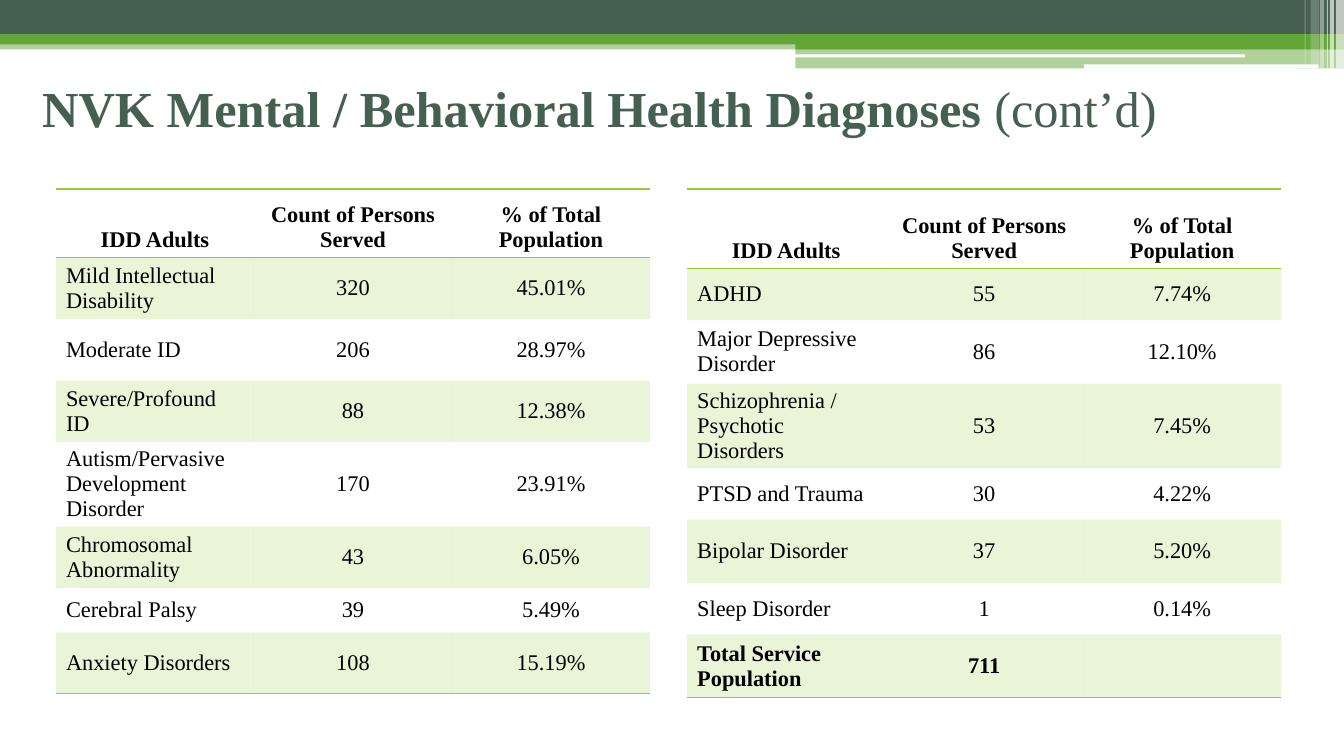
from dataclasses import dataclass

import lxml.etree
import pptx
import pptx.dml.color
import pptx.enum.shapes
import pptx.enum.text
import pptx.oxml
import pptx.oxml.ns
import pptx.util

COLORS = {
    "dark": "455F51",
    "green": "63A537",
    "lime": "99CB38",
    "white": "FFFFFF",
    "black": "000000",
}
FONT = "Times New Roman"
PLAIN_TABLE_STYLE = "{2D5ABB26-0587-4C30-8999-92F81FD0307C}"
GRID_COLUMNS, GRID_ROWS = 1333, 750
PAGE_WIDTH, PAGE_HEIGHT = pptx.util.Inches(13.33), pptx.util.Inches(7.5)
Align = pptx.enum.text.PP_ALIGN
Anchor = pptx.enum.text.MSO_ANCHOR
Preset = pptx.enum.shapes.MSO_SHAPE


@dataclass
class Band:
    column: int
    row: int
    columns: int
    rows: int
    color: str
    opacity: int = 100
    rounded: bool = False


@dataclass
class Diagnosis:
    name: str
    count: str
    share: str
    rows: int
    bold: bool = False


@dataclass
class DiagnosisTable:
    column: float
    header_rows: int
    diagnoses: list[Diagnosis]


BANDS = [
    Band(0, 40, 1333, 9, "green", 50),
    Band(0, 0, 1333, 34, "dark"),
    Band(0, 34, 1333, 10, "green"),
    Band(789, 39, 544, 10, "green"),
    Band(789, 48, 544, 20, "green", 50),
    Band(788, 54, 447, 3, "white", rounded=True),
    Band(1075, 64, 233, 4, "white", rounded=True),
    Band(1325, 0, 8, 68, "white", 65),
    Band(1319, 0, 4, 68, "white", 65),
    Band(1316, 0, 1, 68, "white", 60),
    Band(1309, 0, 4, 68, "white", 40),
    Band(1300, 0, 8, 64, "white", 20),
    Band(1294, 0, 1, 64, "white", 30),
]
HEADERS = ["IDD Adults", "Count of Persons Served", "% of Total Population"]
TABLE_ROW, TABLE_CELL_COLUMNS, DIAGNOSIS_MARGIN_ROWS = 187.5, 196.4, 2
TABLES = [
    DiagnosisTable(55.5, 68, [
        Diagnosis("Mild Intellectual Disability", "320", "45.01%", 61),
        Diagnosis("Moderate ID", "206", "28.97%", 61),
        Diagnosis("Severe/Profound ID", "88", "12.38%", 61),
        Diagnosis("Autism/Pervasive Development Disorder", "170", "23.91%", 44),
        Diagnosis("Chromosomal Abnormality", "43", "6.05%", 61),
        Diagnosis("Cerebral Palsy", "39", "5.49%", 44),
        Diagnosis("Anxiety Disorders", "108", "15.19%", 61),
    ]),
    DiagnosisTable(681.5, 79, [
        Diagnosis("ADHD", "55", "7.74%", 51),
        Diagnosis("Major Depressive Disorder", "86", "12.10%", 63),
        Diagnosis("Schizophrenia / Psychotic Disorders", "53", "7.45%", 51),
        Diagnosis("PTSD and Trauma", "30", "4.22%", 51),
        Diagnosis("Bipolar Disorder", "37", "5.20%", 63),
        Diagnosis("Sleep Disorder", "1", "0.14%", 51),
        Diagnosis("Total Service Population", "711", "", 63, bold=True),
    ]),
]


def across(columns: float) -> int:
    return round(PAGE_WIDTH * columns / GRID_COLUMNS)


def down(rows: float) -> int:
    return round(PAGE_HEIGHT * rows / GRID_ROWS)


def paint(fill, color: str, opacity: int = 100) -> None:
    fill.solid()
    fill.fore_color.rgb = pptx.dml.color.RGBColor.from_string(COLORS[color])
    if opacity < 100:
        tint = fill._xPr.find(".//" + pptx.oxml.ns.qn("a:srgbClr"))
        lxml.etree.SubElement(tint, pptx.oxml.ns.qn("a:alpha"), val=str(opacity * 1000))


def add_span(para, text: str, size: int, color: str, bold: bool) -> None:
    span = para.add_run()
    span.text = text
    span.font.name = FONT
    span.font.size = pptx.util.Pt(size)
    span.font.bold = bold
    span.font.color.rgb = pptx.dml.color.RGBColor.from_string(COLORS[color])


def add_band(page, band: Band) -> None:
    preset = Preset.ROUNDED_RECTANGLE if band.rounded else Preset.RECTANGLE
    shape = page.shapes.add_shape(preset, across(band.column), down(band.row),
                                  across(band.columns), down(band.rows))
    shape.shadow.inherit = False
    shape.line.fill.background()
    paint(shape.fill, band.color, band.opacity)


def add_title(page) -> None:
    box = page.shapes.add_textbox(across(32), down(48), across(1200), down(117))
    box.text_frame.word_wrap = True
    box.text_frame.vertical_anchor = Anchor.MIDDLE
    para = box.text_frame.paragraphs[0]
    add_span(para, "NVK Mental / Behavioral Health Diagnoses ", 36, "dark", True)
    add_span(para, "(cont’d)", 36, "dark", False)


def rule_cell(cell, sides: list[str]) -> None:
    properties = cell._tc.get_or_add_tcPr()
    for position, side in enumerate(sides):
        properties.insert(position, pptx.oxml.parse_xml(
            f'<a:ln{side} {pptx.oxml.ns.nsdecls("a")} w="12700"><a:solidFill>'
            f'<a:srgbClr val="{COLORS["lime"]}"/></a:solidFill></a:ln{side}>'))


def fill_cell(cell, text: str, align, anchor, bold: bool) -> None:
    cell.vertical_anchor = anchor
    para = cell.text_frame.paragraphs[0]
    para.alignment = align
    if text:
        add_span(para, text, 16, "black", bold)


def add_diagnosis_table(page, listing: DiagnosisTable) -> None:
    heights = [listing.header_rows] + [item.rows for item in listing.diagnoses]
    frame = page.shapes.add_table(
        len(heights), len(HEADERS), across(listing.column), down(TABLE_ROW),
        across(TABLE_CELL_COLUMNS * len(HEADERS)), down(sum(heights)))
    table = frame.table
    table.first_row = table.horz_banding = False
    table._tbl.tblPr.find(pptx.oxml.ns.qn("a:tableStyleId")).text = PLAIN_TABLE_STYLE
    for column in table.columns:
        column.width = across(TABLE_CELL_COLUMNS)
    for row, height in zip(table.rows, heights):
        row.height = down(height)
    for index, header in enumerate(HEADERS):
        cell = table.cell(0, index)
        fill_cell(cell, header, Align.CENTER, Anchor.BOTTOM, True)
        cell.fill.background()
        rule_cell(cell, ["T", "B"])
    for number, item in enumerate(listing.diagnoses, start=1):
        for index, text in enumerate([item.name, item.count, item.share]):
            cell = table.cell(number, index)
            align = Align.CENTER if index else Align.LEFT
            fill_cell(cell, text, align, Anchor.MIDDLE, item.bold)
            cell.margin_top = cell.margin_bottom = down(DIAGNOSIS_MARGIN_ROWS)
            if number % 2:
                paint(cell.fill, "lime", 20)
            else:
                cell.fill.background()
            if number == len(listing.diagnoses):
                rule_cell(cell, ["B"])


def main() -> None:
    deck = pptx.Presentation()
    deck.slide_width, deck.slide_height = PAGE_WIDTH, PAGE_HEIGHT
    page = deck.slides.add_slide(deck.slide_layouts[6])
    for band in BANDS:
        add_band(page, band)
    add_title(page)
    for listing in TABLES:
        add_diagnosis_table(page, listing)
    deck.save("out.pptx")


if __name__ == "__main__":
    main()
